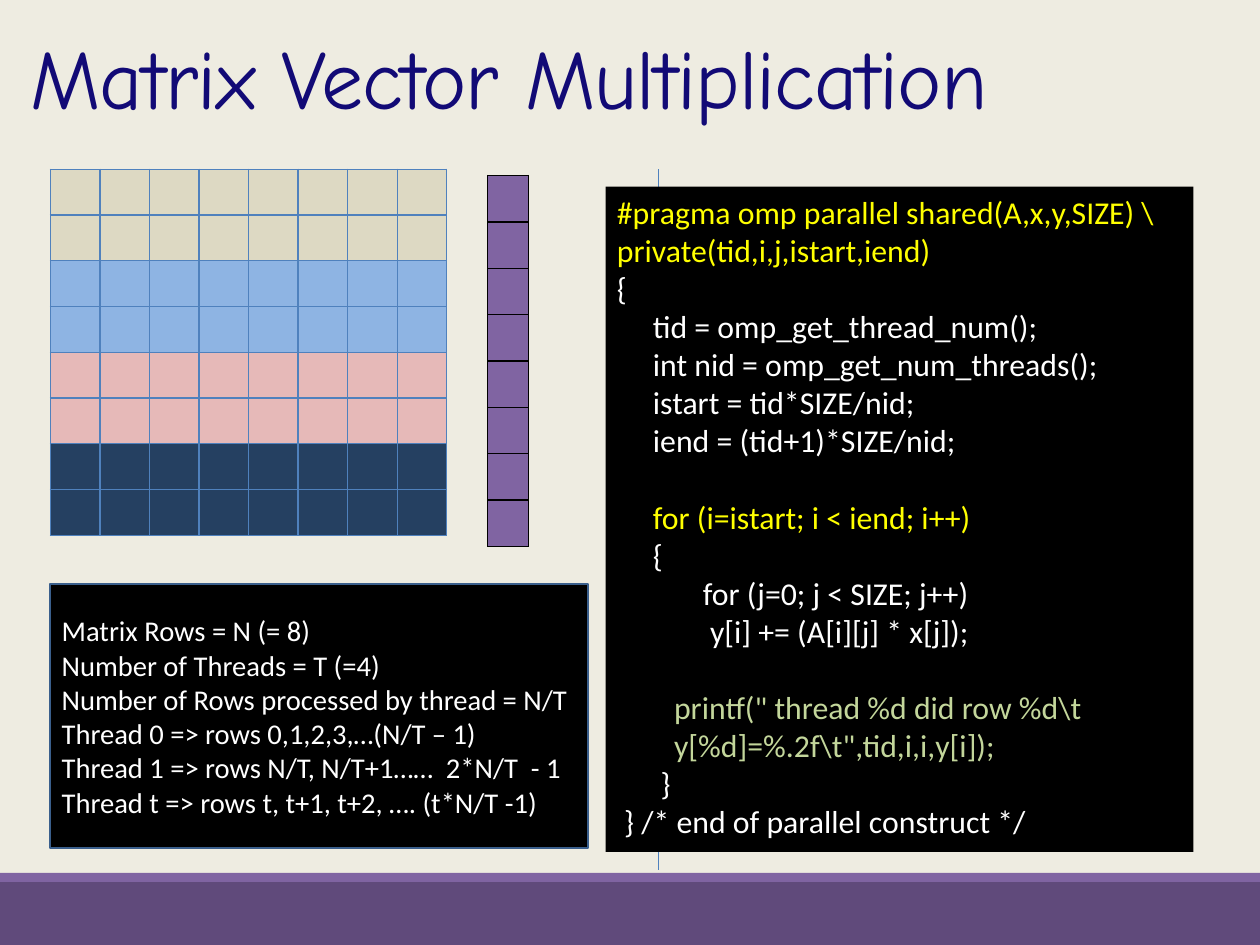
from lxml.etree import SubElement
from pptx import Presentation
from pptx.dml.color import RGBColor
from pptx.enum.shapes import MSO_CONNECTOR as Link, MSO_SHAPE as Form
from pptx.enum.text import MSO_ANCHOR as Anchor, PP_ALIGN as Align
from pptx.oxml.ns import qn
from pptx.util import Cm, Pt

WHITE, BLACK, YELLOW, GREEN = "FFFFFF", "000000", "FFFF00", "C3D69B"
BLUE, PURPLE, PLUM = "4F81BD", "8064A2", "604A7B"
BANDS = ["DDD9C3", "8EB4E3", "E6B9B8", "254061"]
SIZE = 8

NOTES = [
    "Matrix Rows = N (= 8)",
    "Number of Threads = T (=4)",
    "Number of Rows processed by thread = N/T",
    "Thread 0 => rows 0,1,2,3,…(N/T – 1)",
    "Thread 1 => rows N/T, N/T+1……  2*N/T  - 1",
    "Thread t => rows t, t+1, t+2, …. (t*N/T -1)",
]

CODE = [
    ("#pragma omp parallel shared(A,x,y,SIZE) \\ private(tid,i,j,istart,iend)", YELLOW, 0, 0),
    ("{", WHITE, 0, 0),
    ("tid = omp_get_thread_num();", WHITE, 0.8, 0),
    ("int nid = omp_get_num_threads();", WHITE, 0.8, 0),
    ("istart = tid*SIZE/nid;", WHITE, 0.8, 0),
    ("iend = (tid+1)*SIZE/nid;", WHITE, 0.8, 0),
    ("for (i=istart; i < iend; i++)", YELLOW, 0.8, 24),
    ("{", WHITE, 0.8, 0),
    ("for (j=0; j < SIZE; j++)", WHITE, 1.91, 0),
    ("y[i] += (A[i][j] * x[j]);", WHITE, 2.07, 0),
    ("printf(\" thread %d did row %d\\t y[%d]=%.2f\\t\",tid,i,i,y[i]);", GREEN, 1.27, 24),
    ("}", WHITE, 0.97, 0),
    ("} /* end of parallel construct */", WHITE, 0.16, 0),
]


def color(code):
    return RGBColor.from_string(code)


class Deck:
    font = "Calibri"
    title = "Comic Neue"
    ink = "120A76"
    paper = "EEECE1"

    def __init__(self, wide, high):
        self.show = Presentation()
        self.show.slide_width, self.show.slide_height = Cm(wide), Cm(high)
        self.slide = self.show.slides.add_slide(self.show.slide_layouts[6])
        fill = self.slide.background.fill
        fill.solid()
        fill.fore_color.rgb = color(self.paper)

    def box(self, x, y, wide, high, fill, edge=None):
        box = self.slide.shapes.add_shape(Form.RECTANGLE, Cm(x), Cm(y), Cm(wide), Cm(high))
        box.shadow.inherit = False
        box.fill.solid()
        box.fill.fore_color.rgb = color(fill)
        if edge:
            box.line.color.rgb = color(edge)
            box.line.width = Pt(1.25)
        else:
            box.line.fill.background()
        return box

    def line(self, x, top, end):
        line = self.slide.shapes.add_connector(Link.STRAIGHT, Cm(x), Cm(top), Cm(x), Cm(end))
        line.line.color.rgb = color(BLUE)
        line.line.width = Pt(1)
        SubElement(line._element.spPr, qn("a:effectLst"))

    def text(self, box, rows, size, anchor):
        frame = box.text_frame
        frame.word_wrap = True
        frame.vertical_anchor = anchor
        for i, (text, ink, indent, gap) in enumerate(rows):
            para = frame.add_paragraph() if i else frame.paragraphs[0]
            para.text = text
            para.alignment = Align.LEFT
            para.space_before = Pt(gap)
            para.font.name = self.font
            para.font.size = Pt(size)
            para.font.color.rgb = color(ink)
            para._p.get_or_add_pPr().set("marL", str(Cm(indent)))

    def head(self, text, x, y, wide, high):
        box = self.slide.shapes.add_textbox(Cm(x), Cm(y), Cm(wide), Cm(high))
        box.text_frame.word_wrap = True
        para = box.text_frame.paragraphs[0]
        para.text = text
        para.line_spacing = 0.85
        para.font.name = self.title
        para.font.size = Pt(52.9)
        para.font.color.rgb = color(self.ink)
        para.runs[0]._r.get_or_add_rPr().set("spc", "-60")

    def grid(self, x, y, wide, high, fills, count, edge):
        rows = len(fills)
        table = self.slide.shapes.add_table(
            rows, count, Cm(x), Cm(y), Cm(wide), Cm(high)).table
        for row, fill in zip(table.rows, fills):
            for cell in row.cells:
                cell.margin_top = cell.margin_bottom = 0
                self.edge(cell, edge)
                cell.fill.solid()
                cell.fill.fore_color.rgb = color(fill)

    def edge(self, cell, ink):
        props = cell._tc.get_or_add_tcPr()
        for side in ("lnL", "lnR", "lnT", "lnB"):
            line = SubElement(props, qn(f"a:{side}"), w=str(Pt(1)))
            fill = SubElement(line, qn("a:solidFill"))
            SubElement(fill, qn("a:srgbClr"), val=ink)


def main():
    deck = Deck(28, 21)
    deck.box(0, 19.6, 28, 1.4, PLUM)
    deck.box(0, 19.4, 28, 0.2, PURPLE)
    deck.line(14.63, 3.76, 19.33)
    notes = deck.box(1.12, 12.98, 11.94, 5.87, BLACK, "3A5F8C")
    deck.text(notes, [(text, WHITE, 0, 0) for text in NOTES], 18, Anchor.MIDDLE)
    code = deck.box(13.46, 4.15, 13.06, 14.78, BLACK)
    deck.text(code, CODE, 20, Anchor.TOP)
    deck.head("Matrix Vector Multiplication", 0.43, 0.79, 25.2, 2.97)
    fills = [BANDS[i * len(BANDS) // SIZE] for i in range(SIZE)]
    deck.grid(1.12, 3.76, 8.81, 8.14, fills, SIZE, BLUE)
    deck.grid(10.84, 3.9, 0.91, 8.24, [PURPLE] * SIZE, 1, BLACK)
    deck.show.save("out.pptx")


if __name__ == "__main__":
    main()
